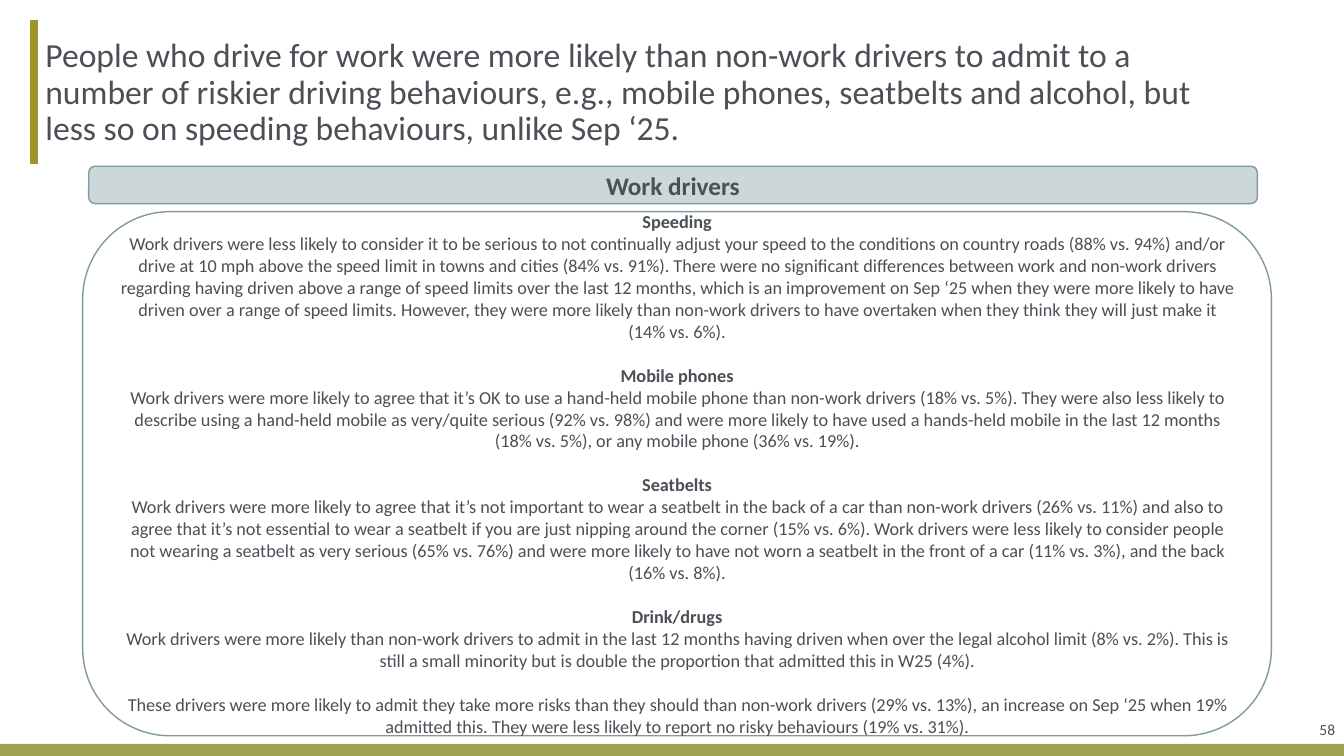
"""Build the slide comparing work drivers with non-work drivers."""
from lxml import etree
from pptx import Presentation
from pptx.dml.color import RGBColor
from pptx.enum.shapes import MSO_CONNECTOR, MSO_SHAPE
from pptx.enum.text import MSO_ANCHOR, MSO_AUTO_SIZE, PP_ALIGN
from pptx.oxml.ns import qn
from pptx.util import Inches, Pt

RECT, ROUNDED = MSO_SHAPE.RECTANGLE, MSO_SHAPE.ROUNDED_RECTANGLE
STRAIGHT = MSO_CONNECTOR.STRAIGHT
MIDDLE, NO_FIT = MSO_ANCHOR.MIDDLE, MSO_AUTO_SIZE.NONE
LEFT, CENTER, RIGHT = PP_ALIGN.LEFT, PP_ALIGN.CENTER, PP_ALIGN.RIGHT

HEADLINE = (
    "People who drive for work were more likely than non-work drivers to admit to a "
    "number of riskier driving behaviours, e.g., mobile phones, seatbelts and alcohol, "
    "but less so on speeding behaviours, unlike Sep ‘25."
)
BANNER = "Work drivers"
PAGE_NUMBER = "58"
FINDINGS = [
    ("Speeding",
     "Work drivers were less likely to consider it to be serious to not continually adjust "
     "your speed to the conditions on country roads (88% vs. 94%) and/or drive at 10 mph "
     "above the speed limit in towns and cities (84% vs. 91%). There were no significant "
     "differences between work and non-work drivers regarding having driven above a range "
     "of speed limits over the last 12 months, which is an improvement on Sep ‘25 when they "
     "were more likely to have driven over a range of speed limits. However, they were more "
     "likely than non-work drivers to have overtaken when they think they will just make it "
     "(14% vs. 6%)."),
    ("Mobile phones",
     "Work drivers were more likely to agree that it’s OK to use a hand-held mobile phone "
     "than non-work drivers (18% vs. 5%). They were also less likely to describe using a "
     "hand-held mobile as very/quite serious (92% vs. 98%) and were more likely to have used "
     "a hands-held mobile in the last 12 months (18% vs. 5%), or any mobile phone "
     "(36% vs. 19%)."),
    ("Seatbelts",
     "Work drivers were more likely to agree that it’s not important to wear a seatbelt in "
     "the back of a car than non-work drivers (26% vs. 11%) and also to agree that it’s not "
     "essential to wear a seatbelt if you are just nipping around the corner (15% vs. 6%). "
     "Work drivers were less likely to consider people not wearing a seatbelt as very "
     "serious (65% vs. 76%) and were more likely to have not worn a seatbelt in the front of "
     "a car (11% vs. 3%), and the back (16% vs. 8%)."),
    ("Drink/drugs",
     "Work drivers were more likely than non-work drivers to admit in the last 12 months "
     "having driven when over the legal alcohol limit (8% vs. 2%). This is still a small "
     "minority but is double the proportion that admitted this in W25 (4%)."),
    (None,
     "These drivers were more likely to admit they take more risks than they should than "
     "non-work drivers (29% vs. 13%), an increase on Sep ‘25 when 19% admitted this. They "
     "were less likely to report no risky behaviours (19% vs. 31%)."),
]

FONT = "Calibri"
SECTION_GAP = Pt(15.85)
COLORS = {
    "text": "4B4F56",
    "footer": "9FA052",
    "accent": "9F962B",
    "outline": "7F9B9F",
    "banner": "CCD7D9",
}


def color(name):
    return RGBColor.from_string(COLORS[name])


def write(paragraph, text, size, align, bold=False):
    paragraph.alignment = align
    run = paragraph.add_run()
    run.text = text
    run.font.name, run.font.size, run.font.bold = FONT, Pt(size), bold
    run.font.color.rgb = color("text")


def add_panel(slide, preset, box, fill=None, outline=None):
    panel = slide.shapes.add_shape(preset, *map(Inches, box))
    panel.shadow.inherit = False
    if fill:
        panel.fill.solid()
        panel.fill.fore_color.rgb = color(fill)
    else:
        panel.fill.background()
    if outline:
        panel.line.color.rgb = color(outline)
        panel.line.width = Pt(1)
    else:
        panel.line.fill.background()
    panel.text_frame.vertical_anchor = MIDDLE
    return panel


def add_headline(slide):
    title = slide.shapes.title
    title.left, title.top, title.width, title.height = map(Inches, (0.37, 0.2, 11.79, 1.45))
    frame = title.text_frame
    frame.word_wrap, frame.auto_size, frame.vertical_anchor = True, NO_FIT, MIDDLE
    frame.margin_left = Inches(0.08)
    frame.margin_top = frame.margin_right = frame.margin_bottom = 0
    frame.paragraphs[0].line_spacing = 0.9
    write(frame.paragraphs[0], HEADLINE, 24, LEFT)


def add_findings(slide):
    frame = add_panel(slide, ROUNDED, (0.82, 2.1, 11.79, 5.2), outline="outline").text_frame
    frame.word_wrap = True
    paragraph = frame.paragraphs[0]
    for index, (topic, finding) in enumerate(FINDINGS):
        if index:
            paragraph = frame.add_paragraph()
            paragraph.space_before = SECTION_GAP
        if topic:
            write(paragraph, topic, 13, CENTER, bold=True)
            paragraph = frame.add_paragraph()
        write(paragraph, finding, 13, CENTER)


def main():
    prs = Presentation()
    prs.slide_width, prs.slide_height = Inches(13.33), Inches(7.5)
    slide = prs.slides.add_slide(prs.slide_layouts[5])

    add_panel(slide, RECT, (0, 7.38, 13.33, 0.12), fill="footer")
    accent = slide.shapes.add_connector(
        STRAIGHT, Inches(0.34), Inches(0.2), Inches(0.34), Inches(1.63))
    accent.line.color.rgb = color("accent")
    accent.line.width = Pt(6)
    etree.SubElement(accent._element.spPr, qn("a:effectLst"))

    add_headline(slide)
    add_findings(slide)
    banner = add_panel(slide, ROUNDED, (0.88, 1.65, 11.59, 0.37), "banner", "outline")
    write(banner.text_frame.paragraphs[0], BANNER, 18, CENTER, bold=True)

    page = slide.shapes.add_textbox(*map(Inches, (12.42, 6.95, 0.92, 0.58))).text_frame
    page.word_wrap, page.vertical_anchor = True, MIDDLE
    write(page.paragraphs[0], PAGE_NUMBER, 11, RIGHT)

    prs.save("out.pptx")


if __name__ == "__main__":
    main()
